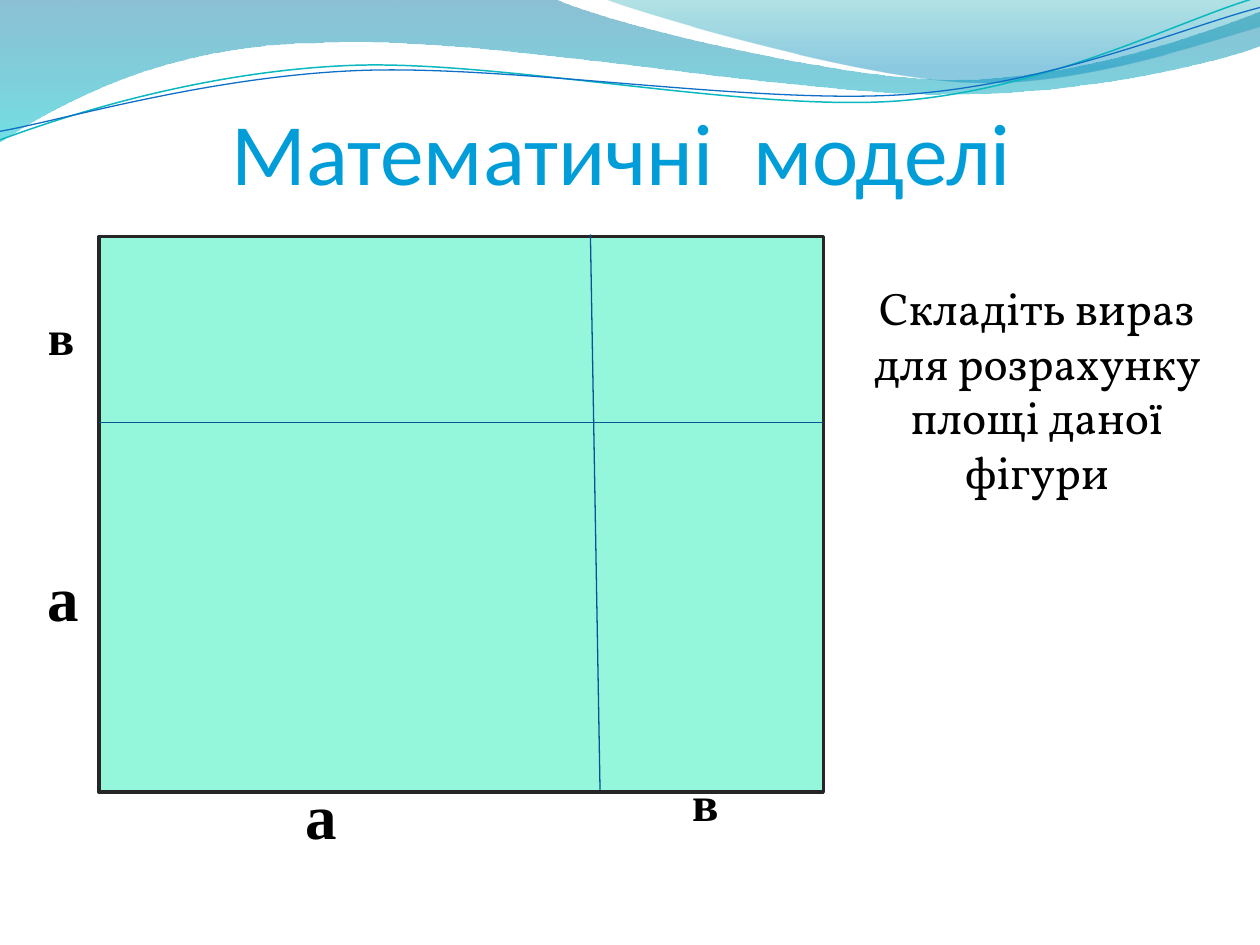
from lxml import etree
from pptx import Presentation
from pptx.dml.color import RGBColor
from pptx.enum.shapes import MSO_CONNECTOR, MSO_SHAPE
from pptx.enum.text import MSO_ANCHOR, MSO_AUTO_SIZE, PP_ALIGN
from pptx.oxml.ns import qn
from pptx.util import Pt

LINE = MSO_CONNECTOR.STRAIGHT
RECT = MSO_SHAPE.RECTANGLE
TOP, BOTTOM = MSO_ANCHOR.TOP, MSO_ANCHOR.BOTTOM
LEFT, CENTER = PP_ALIGN.LEFT, PP_ALIGN.CENTER
GROW = MSO_AUTO_SIZE.SHAPE_TO_FIT_TEXT

HUES = {
    "title": "009DD9", "text": "000000", "area": "94F7DC",
    "frame": "262626", "split": "095295",
    "teal": "0AB8BF", "blue": "0F6FC6",
    "band_top": "0074A1", "band_low": "00C6CF",
    "wedge_top": "00A1A9", "wedge_low": "008BBF",
}
TILT = 357.3

# Outlines: a pair is a straight step, six numbers are a Bezier curve.
BAND = [
    (0, -0.7), (316.8, -0.7),
    (342.7, 12.2, 478.1, 45.4, 545.8, 45.4),
    (614.2, 45.4, 689.8, 18.7, 720, 6.5), (720.7, 25.9),
    (707.8, 31.7, 626.4, 54.7, 537.1, 54),
    (447.8, 54, 275, 20.2, 185, 24.5),
    (92.9, 25.2, 33.1, 59.8, -0.7, 81.4), (0, -0.7),
]
WEDGE = [
    (344.9, -0.7),
    (366.5, 7.9, 491, 44.6, 553.7, 46.8),
    (616.3, 49.7, 691.9, 23, 720, 15.1), (720, 0), (344.9, -0.7),
]
TEAL = [
    (-1.4, 63),
    (33.8, 51.7, 114.1, 29.4, 199.8, 29.9),
    (284.9, 30.3, 425.8, 67.3, 512.4, 64.9),
    (599, 62.4, 676.5, 25.7, 720.2, 15.5),
]
BLUE = [
    (-1.1, 58),
    (32.9, 53.8, 118.3, 32.5, 204.1, 33),
    (290.6, 33.4, 428.9, 63.1, 515.5, 61.4),
    (601.3, 59.6, 678.4, 30.1, 721.4, 21.3),
]


def rgb(name):
    return RGBColor.from_string(HUES[name])


def add_path(slide, path, close):
    """Build the outline, then bend the steps that have control points."""
    first, *rest = [(Pt(seg[-2]), Pt(seg[-1])) for seg in path]
    pen = slide.shapes.build_freeform(*first)
    pen.add_line_segments(rest, close=close)
    shape = pen.convert_to_shape()
    shape.shadow.inherit = False
    steps = list(shape._element.spPr.iter(qn("a:lnTo")))
    for step, seg in zip(steps, path[1:]):
        if len(seg) == 6:
            step.addnext(bend(seg, shape))
            step.getparent().remove(step)
    return shape


def bend(seg, shape):
    curve = etree.Element(qn("a:cubicBezTo"))
    for x, y in zip(seg[::2], seg[1::2]):
        dot = etree.SubElement(curve, qn("a:pt"))
        dot.set("x", str(Pt(x) - shape.left))
        dot.set("y", str(Pt(y) - shape.top))
    return curve


def add_wave(slide, path, stops):
    """Draw a closed outline with stops of (position, colour, opacity %)."""
    shape = add_path(slide, path, True)
    shape.line.fill.background()
    shape.fill.gradient()
    shape.fill.gradient_angle = 270
    for stop, (pos, hue, alpha) in zip(shape.fill.gradient_stops, stops):
        stop.position = pos
        stop.color.rgb = rgb(hue)
    nodes = shape._element.spPr.iter(qn("a:srgbClr"))
    for node, (pos, hue, alpha) in zip(nodes, stops):
        etree.SubElement(node, qn("a:alpha")).set("val", str(alpha * 1000))


def add_curve(slide, path, hue, width):
    shape = add_path(slide, path, False)
    shape.rotation = TILT
    shape.fill.background()
    shape.line.color.rgb = rgb(hue)
    shape.line.width = Pt(width)


def add_area(slide, box):
    shape = slide.shapes.add_shape(RECT, *map(Pt, box))
    shape.shadow.inherit = False
    shape.fill.solid()
    shape.fill.fore_color.rgb = rgb("area")
    shape.line.color.rgb = rgb("frame")
    shape.line.width = Pt(2)


def add_split(slide, ends):
    line = slide.shapes.add_connector(LINE, *map(Pt, ends))
    line.line.color.rgb = rgb("split")
    line.line.width = Pt(0.75)
    etree.SubElement(line._element.spPr, qn("a:effectLst"))


def add_text(slide, text, box, size, font, hue="text", bold=False,
             align=LEFT, anchor=TOP, before=0):
    frame = slide.shapes.add_textbox(*map(Pt, box)).text_frame
    frame.word_wrap = True
    frame.vertical_anchor = anchor
    frame.text = text
    para = frame.paragraphs[0]
    para.alignment = align
    para.space_before = Pt(before)
    face = para.runs[0].font
    face.name, face.size, face.bold = font, Pt(size), bold
    face.color.rgb = rgb(hue)
    return frame


def main():
    deck = Presentation()
    deck.slide_width, deck.slide_height = Pt(720), Pt(540)
    slide = deck.slides.add_slide(deck.slide_layouts[6])

    add_wave(slide, BAND, [(0, "band_top", 45), (1, "band_low", 55)])
    add_wave(slide, WEDGE, [(0, "wedge_top", 30), (0.8, "wedge_low", 45)])
    add_curve(slide, TEAL, "teal", 0.85)
    add_curve(slide, BLUE, "blue", 0.75)

    title = add_text(slide, "Математичні  моделі", (31.2, 26, 648, 90), 50,
                     "Calibri", "title", align=CENTER, anchor=BOTTOM)
    title.margin_left = title.margin_right = title.margin_bottom = 0
    add_text(slide, "Складіть вираз для розрахунку площі даної фігури",
             (490.3, 156.6, 204.5, 184.3), 26, "Vollkorn",
             align=CENTER, before=5)

    add_area(slide, (56.7, 135.2, 413.8, 317.5))
    for ends in ((337.4, 134, 342.9, 451.4), (56.7, 241.4, 470.5, 241.4)):
        add_split(slide, ends)

    for text, size, box in (
        ("в", 28, (20.2, 171.4, 36.7, 41)),
        ("а", 36, (19.8, 315.7, 51.1, 51.1)),
        ("в", 28, (388.4, 437.8, 67.7, 41)),
        ("а", 36, (167.3, 439.9, 45.4, 51.1)),
    ):
        label = add_text(slide, text, box, size, "Times New Roman", bold=True)
        label.auto_size = GROW

    deck.save("out.pptx")


if __name__ == "__main__":
    main()
